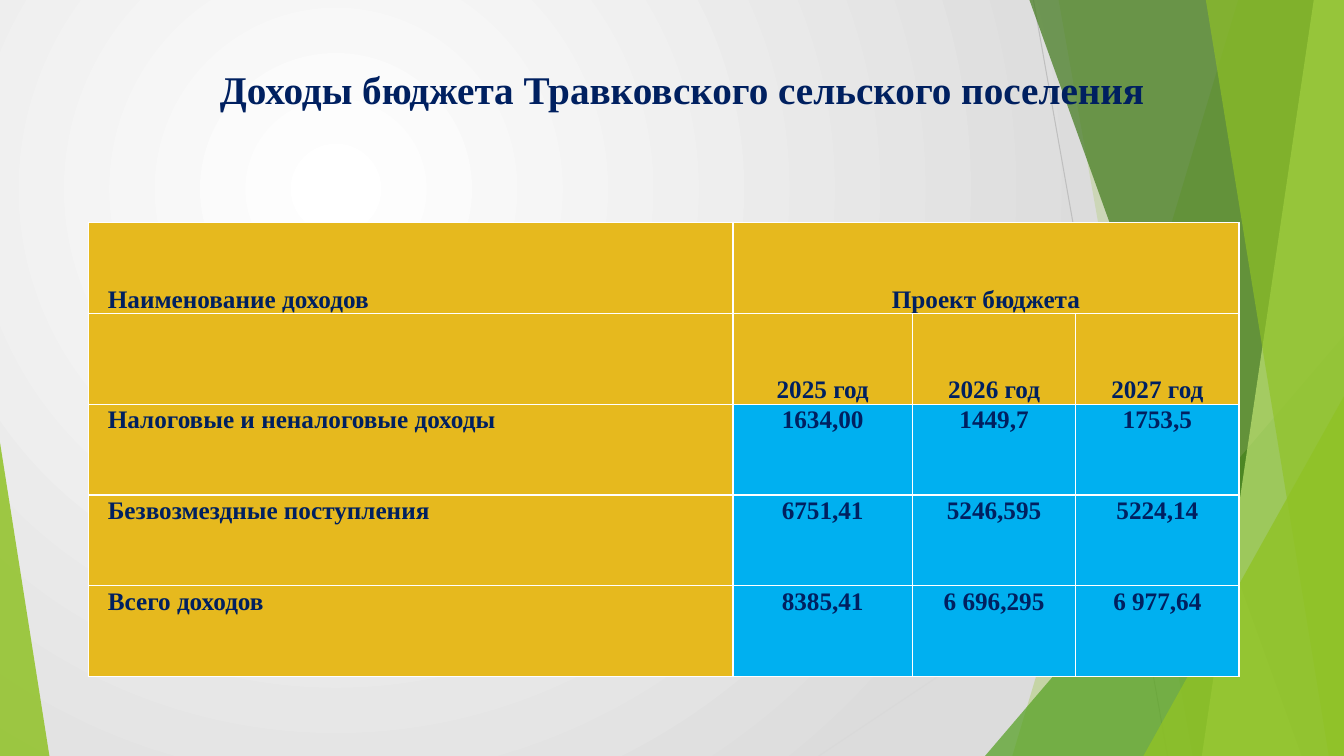
from dataclasses import dataclass

from lxml import etree
from pptx import Presentation
from pptx import util as u
from pptx.dml.color import RGBColor
from pptx.enum import shapes, text
from pptx.oxml.ns import qn

EMU_PER_PX = 9144
WIDTH, HEIGHT = 1333, 750


@dataclass(frozen=True)
class Theme:
    font: str = "Times New Roman"
    navy: str = "002060"
    gold: str = "E6B91E"
    blue: str = "00B0F0"
    white: str = "FFFFFF"
    backdrop: str = "DCDCDC"
    lime: str = "90C226"
    green: str = "54A021"
    forest: str = "3F7819"
    pale: str = "C0E474"
    title_size: int = 28
    table_size: int = 18
    border: int = 1
    hairline: float = 0.75


@dataclass(frozen=True)
class Ray:
    start: tuple[int, int]
    end: tuple[int, int]
    color: str


@dataclass(frozen=True)
class Band:
    """A facet between a slanted left edge and the slide's right edge."""
    top_x: int
    bottom_x: int
    color: str
    opacity: int


@dataclass(frozen=True)
class Wedge:
    """A right triangle standing on the slide's bottom edge."""
    left: int
    top: int
    width: int
    apex: int
    color: str
    opacity: int


THEME = Theme()
RAYS = [
    Ray((1025, 0), (1158, 750), "BFBFBF"),
    Ray((1333, 403), (812, 750), "D9D9D9"),
]
FACETS = [
    Band(1228, 1004, THEME.lime, 30),
    Band(1050, 1183, THEME.lime, 20),
    Wedge(977, 333, 356, 1, THEME.green, 72),
    Band(1021, 1291, THEME.forest, 70),
    Band(1303, 1192, THEME.pale, 70),
    Band(1196, 1318, THEME.lime, 65),
    Wedge(1134, 393, 199, 1, THEME.lime, 80),
    Wedge(0, 439, 49, 0, THEME.lime, 85),
]
COLUMNS = [639, 178, 162, 162]
ROW_HEIGHT = 90
HEADER_ROWS = 2
LABEL_INDENT = 19
INCOME = [
    ["Наименование доходов", "Проект бюджета", "", ""],
    ["", "2025 год", "2026 год", "2027 год"],
    ["Налоговые и неналоговые доходы", "1634,00", "1449,7", "1753,5"],
    ["Безвозмездные поступления", "6751,41", "5246,595", "5224,14"],
    ["Всего доходов", "8385,41", "6 696,295", "6 977,64"],
]


def px(length: int) -> int:
    return u.Emu(length * EMU_PER_PX)


def rgb(color: str) -> RGBColor:
    return RGBColor.from_string(color)


def paint_background(page) -> None:
    fill = page.background.fill
    fill.gradient()
    for stop, color in zip(fill.gradient_stops, (THEME.white, THEME.backdrop)):
        stop.color.rgb = rgb(color)
    gradient = page.element.find(".//" + qn("a:gradFill"))
    linear = gradient.find(qn("a:lin"))
    radial = etree.Element(qn("a:path"), path="circle")
    etree.SubElement(radial, qn("a:fillToRect"),
                     l="50000", t="50000", r="100000", b="100000")
    gradient.replace(linear, radial)


def draw_ray(page, ray: Ray) -> None:
    line = page.shapes.add_connector(
        shapes.MSO_CONNECTOR.STRAIGHT, *map(px, ray.start + ray.end))
    line.line.color.rgb = rgb(ray.color)
    line.line.width = u.Pt(THEME.hairline)
    etree.SubElement(line.element.spPr, qn("a:effectLst"))


def draw_facet(page, facet: Band | Wedge) -> None:
    if isinstance(facet, Band):
        builder = page.shapes.build_freeform(facet.top_x, 0, EMU_PER_PX)
        builder.add_line_segments(
            [(WIDTH, 0), (WIDTH, HEIGHT), (facet.bottom_x, HEIGHT)])
        shape = builder.convert_to_shape()
    else:
        shape = page.shapes.add_shape(
            shapes.MSO_SHAPE.ISOSCELES_TRIANGLE, px(facet.left), px(facet.top),
            px(facet.width), px(HEIGHT - facet.top))
        shape.adjustments[0] = facet.apex
    shape.shadow.inherit = False
    shape.line.fill.background()
    shape.fill.solid()
    shape.fill.fore_color.rgb = rgb(facet.color)
    color = shape.element.find(".//" + qn("a:srgbClr"))
    etree.SubElement(color, qn("a:alpha"), val=str(facet.opacity * 1000))


def write(frame, words: str, *, size: int, align=text.PP_ALIGN.CENTER,
          spacing: float = 1.0, after: int = 0) -> None:
    para = frame.paragraphs[0]
    para.alignment = align
    para.line_spacing = spacing
    para.space_after = u.Pt(after)
    span = para.add_run()
    span.text = words
    span.font.name = THEME.font
    span.font.size = u.Pt(size)
    span.font.bold = True
    span.font.color.rgb = rgb(THEME.navy)


def draw_title(page) -> None:
    box = page.shapes.add_textbox(px(88), px(60), px(1177), px(83))
    box.text_frame.word_wrap = True
    write(box.text_frame, "Доходы бюджета Травковского сельского поселения",
          size=THEME.title_size)


def add_borders(cell) -> None:
    properties = cell._tc.get_or_add_tcPr()
    for side in ("a:lnL", "a:lnR", "a:lnT", "a:lnB"):
        line = etree.SubElement(properties, qn(side), w=str(u.Pt(THEME.border)))
        fill = etree.SubElement(line, qn("a:solidFill"))
        etree.SubElement(fill, qn("a:srgbClr"), val=THEME.white)


def format_cell(cell, words: str, *, header: bool, label: bool) -> None:
    add_borders(cell)
    cell.fill.solid()
    cell.fill.fore_color.rgb = rgb(THEME.gold if header or label else THEME.blue)
    cell.margin_left = px(LABEL_INDENT if label else 0)
    cell.margin_right = cell.margin_top = cell.margin_bottom = 0
    cell.vertical_anchor = (text.MSO_ANCHOR.BOTTOM if header
                            else text.MSO_ANCHOR.TOP)
    if words:
        align = text.PP_ALIGN.JUSTIFY if label else text.PP_ALIGN.CENTER
        write(cell.text_frame, words, size=THEME.table_size, align=align,
              spacing=1.07, after=8)


def draw_income_table(page) -> None:
    table = page.shapes.add_table(
        len(INCOME), len(COLUMNS), px(88), px(221),
        px(sum(COLUMNS)), px(ROW_HEIGHT * len(INCOME))).table
    for column, width in zip(table.columns, COLUMNS):
        column.width = px(width)
    for row_index, row in enumerate(INCOME):
        table.rows[row_index].height = px(ROW_HEIGHT)
        for column_index, words in enumerate(row):
            format_cell(table.cell(row_index, column_index), words,
                        header=row_index < HEADER_ROWS, label=column_index == 0)
    table.cell(0, 1).merge(table.cell(0, 3))


def main() -> None:
    deck = Presentation()
    deck.slide_width, deck.slide_height = px(WIDTH), px(HEIGHT)
    page = deck.slides.add_slide(deck.slide_layouts[6])
    paint_background(page)
    for ray in RAYS:
        draw_ray(page, ray)
    for facet in FACETS:
        draw_facet(page, facet)
    draw_title(page)
    draw_income_table(page)
    deck.save("out.pptx")


if __name__ == "__main__":
    main()
